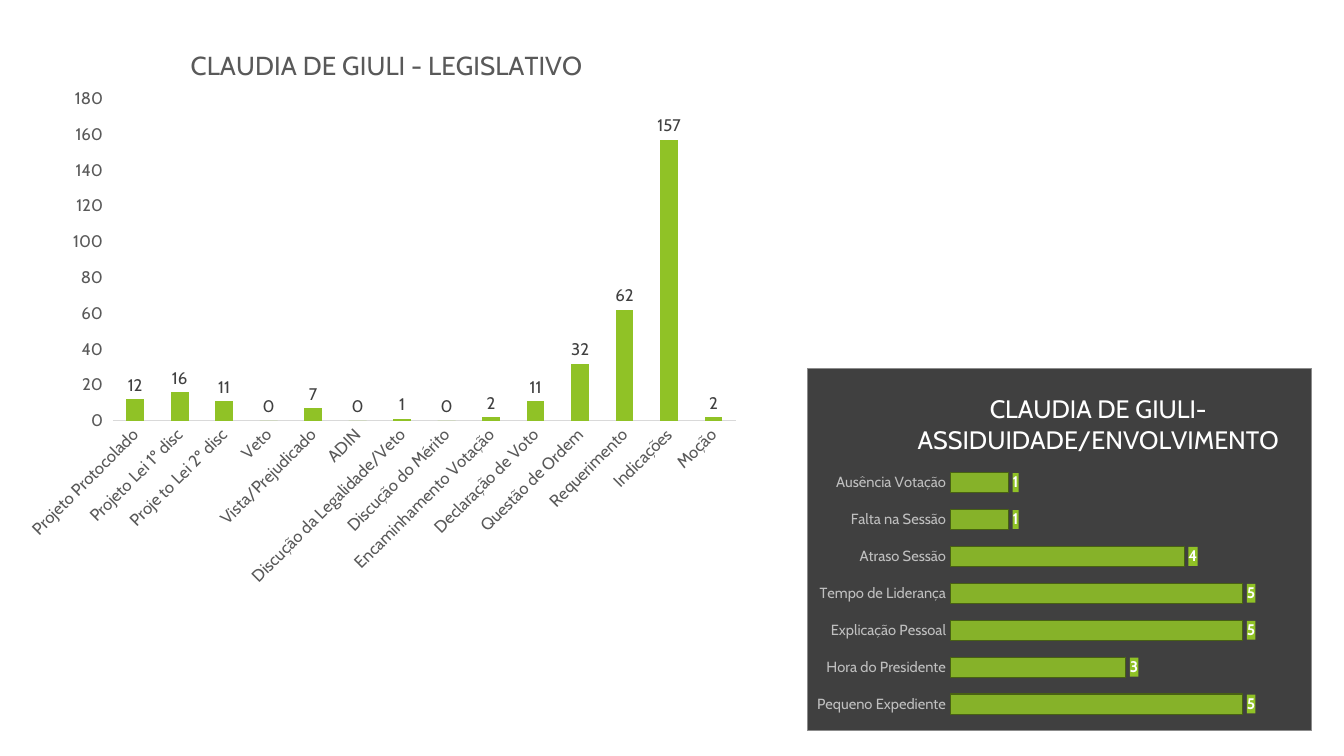
from dataclasses import dataclass
from lxml import etree
from pptx import Presentation
from pptx.chart.data import CategoryChartData
from pptx.dml.color import RGBColor
from pptx.enum.chart import XL_CHART_TYPE, XL_LABEL_POSITION, XL_TICK_MARK
from pptx.oxml import parse_xml
from pptx.oxml.ns import nsdecls, qn
from pptx.util import Emu, Pt

# Content
LEGISLATIVE = dict(
    title="CLAUDIA DE GIULI - LEGISLATIVO",
    data=[("Projeto Protocolado", 12), ("Projeto Lei 1º disc", 16),
          ("Proje to Lei 2º disc", 11), ("Veto", 0), ("Vista/Prejudicado", 7),
          ("ADIN", 0), ("Discução da Legalidade/Veto", 1),
          ("Discução do Mérito", 0), ("Encaminhamento Votação", 2),
          ("Declaração de Voto", 11), ("Questão de Ordem", 32),
          ("Requerimento", 62), ("Indicações", 157), ("Moção", 2)])
ATTENDANCE = dict(
    title="CLAUDIA DE GIULI-ASSIDUIDADE/ENVOLVIMENTO",
    data=[("Pequeno Expediente", 5), ("Hora do Presidente", 3),
          ("Explicação Pessoal", 5), ("Tempo de Liderança", 5),
          ("Atraso Sessão", 4), ("Falta na Sessão", 1), ("Ausência Votação", 1)])

# Boxes in px on the slide: left, top, width, height
LEGISLATIVE_BOX, LEGISLATIVE_PLOT = (14, 19, 737, 580), (113, 99, 623, 322)
ATTENDANCE_BOX, ATTENDANCE_PLOT = (807, 368, 505, 363), (950, 464, 352, 259)
LEGISLATIVE_TITLE, ATTENDANCE_TITLE = (186, 42), (913, 387)


@dataclass(frozen=True)
class Theme:
    font: str = "Cabin"
    green: str = "90C226"
    bar_edge: str = "486113"
    panel: str = "404040"
    panel_edge: str = "8C8C8C"
    text: str = "595959"
    label: str = "404040"
    axis: str = "D9D9D9"
    light: str = "BFBFBF"
    white: str = "FFFFFF"
    title_size: float = 18.6
    panel_title_size: float = 18
    axis_size: float = 12
    panel_axis_size: float = 10.5
    panel_label_size: float = 11


T = Theme()


def px(n):
    return Emu(round(n * 914400 / 100.8))


def set_font(font, size, color, bold=False):
    font.name, font.size, font.bold = T.font, Pt(size), bold
    font.color.rgb = RGBColor.from_string(color)


def solid(color):
    return f'<a:solidFill><a:srgbClr val="{color}"/></a:solidFill>'


def shape_props(fill, line=""):
    return parse_xml(f'<c:spPr {nsdecls("c", "a")}>{solid(fill)}{line}</c:spPr>')


def layout(box, spot, inner=False):
    """Manual layout of a spot given in slide px, as fractions of the chart box."""
    left, top, width, height = box
    parts = ['<c:layoutTarget val="inner"/>'] if inner else []
    parts += ['<c:xMode val="edge"/>', '<c:yMode val="edge"/>']
    values = [(spot[0] - left) / width, (spot[1] - top) / height]
    if inner:
        values += [spot[2] / width, spot[3] / height]
    parts += [f'<c:{k} val="{v:.4f}"/>' for k, v in zip("xywh", values)]
    return parse_xml(f'<c:layout {nsdecls("c")}><c:manualLayout>{"".join(parts)}'
                     '</c:manualLayout></c:layout>')


def drop_layout(parent):
    for old in parent.findall(qn("c:layout")):
        parent.remove(old)


def add_bars(s, kind, content, box, plot_box, title_spot, title_font, cat_font,
             label_font, gap, top_value, step):
    data = CategoryChartData(number_format="0")
    names, values = zip(*content["data"])
    data.categories = names
    data.add_series("Series 1", values)
    chart = s.shapes.add_chart(kind, *map(px, box), data).chart
    chart.has_legend = False
    chart.font.name, chart.font.size = T.font, Pt(10)

    # Title
    chart.has_title = True
    tf = chart.chart_title.text_frame
    tf.text = content["title"]
    set_font(tf.paragraphs[0].font, *title_font)
    chart.chart_title.include_in_layout = False
    title = chart.chart_title._element
    drop_layout(title)
    title.find(qn("c:tx")).addnext(layout(box, title_spot))

    # Plot and axes
    area = chart._chartSpace.chart.plotArea
    drop_layout(area)
    area.insert(0, layout(box, plot_box, inner=True))
    cat, val = chart.category_axis, chart.value_axis
    cat.major_tick_mark = XL_TICK_MARK.NONE
    set_font(cat.tick_labels.font, *cat_font)
    val.has_major_gridlines = False
    val.minimum_scale, val.maximum_scale, val.major_unit = 0, top_value, step
    val.format.line.fill.background()

    # Bars and labels
    plot = chart.plots[0]
    plot.gap_width, plot.vary_by_categories = gap, False
    bars = plot.series[0].format
    bars.fill.solid()
    bars.fill.fore_color.rgb = RGBColor.from_string(T.green)
    plot.has_data_labels = True
    labels = plot.data_labels
    labels.show_value = True
    labels.number_format, labels.number_format_is_linked = "0", False
    labels.position = XL_LABEL_POSITION.OUTSIDE_END
    set_font(labels.font, *label_font)
    return chart


prs = Presentation()
prs.slide_width, prs.slide_height = px(1344), px(756)
s = prs.slides.add_slide(prs.slide_layouts[6])

# Legislative column chart
chart = add_bars(
    s, XL_CHART_TYPE.COLUMN_CLUSTERED, LEGISLATIVE, LEGISLATIVE_BOX,
    LEGISLATIVE_PLOT, LEGISLATIVE_TITLE, (T.title_size, T.text),
    (T.axis_size, T.text), (T.axis_size, T.label), 150, 180, 20)
chart.plots[0].overlap = -25
line = chart.category_axis.format.line
line.color.rgb, line.width = RGBColor.from_string(T.axis), Pt(0.75)
chart.category_axis._element.find(qn("c:txPr")).find(qn("a:bodyPr")).set("rot", "-2700000")
set_font(chart.value_axis.tick_labels.font, T.axis_size, T.text)

# Attendance bar chart on a dark panel
chart = add_bars(
    s, XL_CHART_TYPE.BAR_CLUSTERED, ATTENDANCE, ATTENDANCE_BOX,
    ATTENDANCE_PLOT, ATTENDANCE_TITLE, (T.panel_title_size, T.white),
    (T.panel_axis_size, T.light), (T.panel_label_size, T.white, True), 84, 6, 1)
chart.value_axis.visible = False
chart.category_axis.format.line.fill.background()
bars = chart.plots[0].series[0].format
bars.line.color.rgb, bars.line.width = RGBColor.from_string(T.bar_edge), Pt(0.75)
green = bars.fill._xPr.find(qn("a:solidFill"))[0]
etree.SubElement(green, qn("a:alpha")).set("val", "88000")
label_text = chart.plots[0].data_labels._element.find(qn("c:txPr"))
label_text.addprevious(shape_props(T.green))
edge = f'<a:ln w="{Pt(0.5)}">{solid(T.panel_edge)}</a:ln>'
chart._chartSpace.find(qn("c:txPr")).addprevious(shape_props(T.panel, edge))

prs.save("out.pptx")
